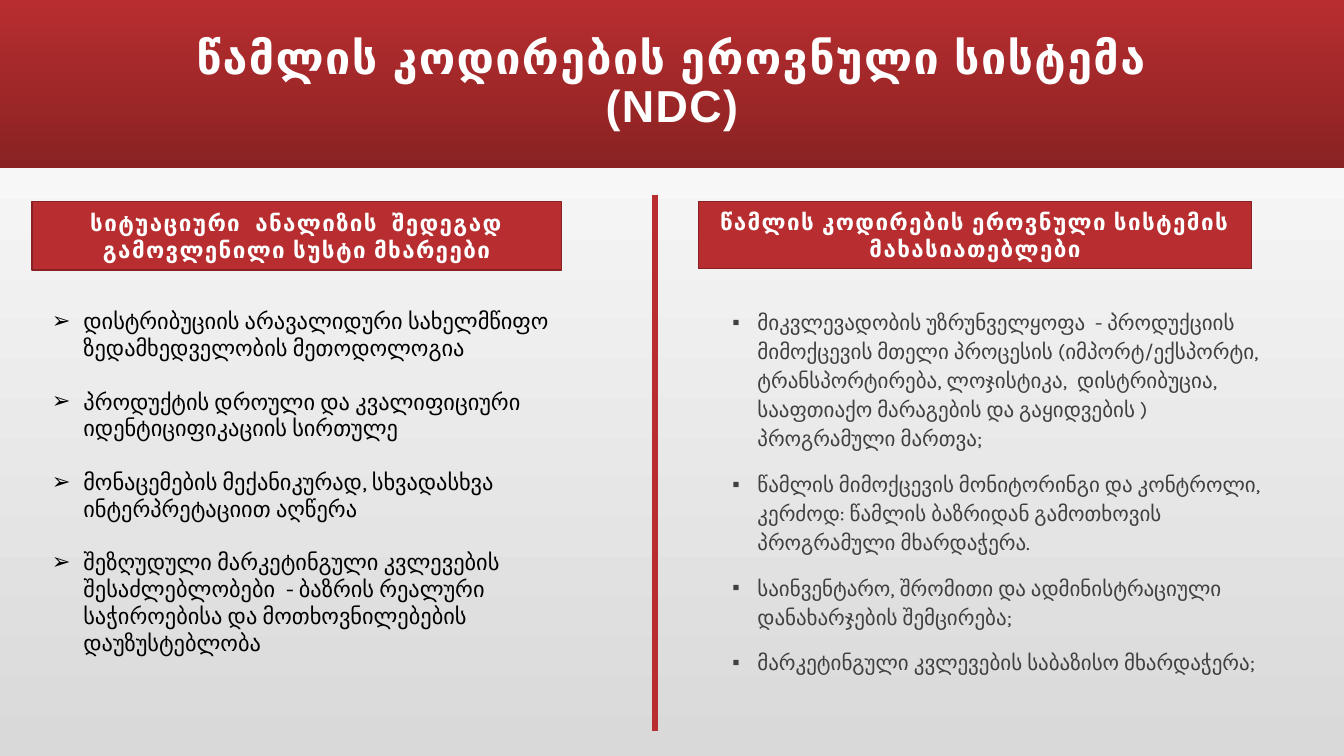
from lxml import etree
from pptx import Presentation
from pptx.dml.color import RGBColor
from pptx.enum.shapes import MSO_CONNECTOR, MSO_SHAPE
from pptx.enum.text import MSO_ANCHOR, MSO_AUTO_SIZE, PP_ALIGN
from pptx.oxml.ns import qn
from pptx.util import Pt

COLORS = {
    "red": "B82D2F", "dark_red": "8A2223", "edge": "882123",
    "white": "FFFFFF", "silver": "D9D9D9", "black": "000000", "gray": "404040",
}


def color(name):
    return RGBColor.from_string(COLORS[name])


def write(para, text, size=16, font="Karla", ink="white", bold=False,
          tracking=0, align=None, line=None, before=0, bullet=None, indent=0):
    span = para.add_run()
    span.text = text
    span.font.size = Pt(size)
    span.font.name = font
    span.font.bold = bold
    span.font.color.rgb = color(ink)
    if tracking:
        span._r.get_or_add_rPr().set("spc", str(tracking * 100))
    para.alignment = align
    para.line_spacing = line
    para.space_before = Pt(before)
    if bullet:
        props = para._p.get_or_add_pPr()
        props.set("marL", str(Pt(indent)))
        props.set("indent", str(-Pt(indent)))
        etree.SubElement(props, qn("a:buFont")).set("typeface", "Arial")
        etree.SubElement(props, qn("a:buChar")).set("char", bullet)


deck = Presentation()
deck.slide_width, deck.slide_height = Pt(960), Pt(540)
page = deck.slides.add_slide(deck.slide_layouts[5])
title = page.shapes.title

# Background and title band
band = page.shapes.add_shape(MSO_SHAPE.RECTANGLE, 0, 0, Pt(960), Pt(120))
band.shadow.inherit = False
band.line.fill.background()
title._element.addprevious(band._element)
for fill, angle, stops in [
    (page.background.fill, 90, ("silver", "white")),
    (band.fill, 270, ("red", "dark_red")),
]:
    fill.gradient()
    fill.gradient_angle = angle
    for stop, name, position in zip(fill.gradient_stops, stops, (0, 1)):
        stop.color.rgb = color(name)
        stop.position = position

# Title
title.left, title.top, title.width, title.height = Pt(84), 0, Pt(792), Pt(120)
title.text_frame.word_wrap = True
title.text_frame.auto_size = MSO_AUTO_SIZE.NONE
title.text_frame.vertical_anchor = MSO_ANCHOR.MIDDLE
write(title.text_frame.paragraphs[0], "წამლის კოდირების ეროვნული სისტემა (NDC)",
      size=32, font="Arial", bold=True, tracking=1, align=PP_ALIGN.CENTER, line=0.9)

# Column headings
for left, width, height, text in [
    (23, 378, 49, "სიტუაციური  ანალიზის  შედეგად გამოვლენილი სუსტი მხარეები"),
    (499, 395, 48, "წამლის კოდირების ეროვნული სისტემის მახასიათებლები"),
]:
    heading = page.shapes.add_shape(
        MSO_SHAPE.RECTANGLE, Pt(left), Pt(144), Pt(width), Pt(height))
    heading.shadow.inherit = False
    heading.fill.solid()
    heading.fill.fore_color.rgb = color("red")
    heading.line.color.rgb = color("edge")
    heading.line.width = Pt(1)
    heading.text_frame.word_wrap = True
    heading.text_frame.vertical_anchor = MSO_ANCHOR.MIDDLE
    write(heading.text_frame.paragraphs[0], text, bold=True, tracking=1,
          align=PP_ALIGN.CENTER)

# Divider between the columns
divider = page.shapes.add_connector(
    MSO_CONNECTOR.STRAIGHT, Pt(468), Pt(139), Pt(468), Pt(522))
divider.line.color.rgb = color("red")
divider.line.width = Pt(4)
etree.SubElement(divider._element.spPr, qn("a:effectLst"))

# Bulleted lists
weaknesses = [
    "დისტრიბუციის არავალიდური სახელმწიფო ზედამხედველობის მეთოდოლოგია",
    "პროდუქტის დროული და კვალიფიციური იდენტიციფიკაციის სირთულე",
    "მონაცემების მექანიკურად, სხვადასხვა ინტერპრეტაციით აღწერა",
    "შეზღუდული მარკეტინგული კვლევების შესაძლებლობები  - ბაზრის რეალური "
    "საჭიროებისა და მოთხოვნილებების დაუზუსტებლობა",
]
features = [
    "მიკვლევადობის უზრუნველყოფა  - პროდუქციის მიმოქცევის მთელი პროცესის "
    "(იმპორტ/ექსპორტი, ტრანსპორტირება, ლოჯისტიკა,  დისტრიბუცია, სააფთიაქო "
    "მარაგების და გაყიდვების ) პროგრამული მართვა;",
    "წამლის მიმოქცევის მონიტორინგი და კონტროლი, კერძოდ: წამლის ბაზრიდან "
    "გამოთხოვის პროგრამული მხარდაჭერა.",
    "საინვენტარო, შრომითი და ადმინისტრაციული დანახარჯების შემცირება;",
    "მარკეტინგული კვლევების საბაზისო მხარდაჭერა;",
]
weakness_style = dict(size=16, ink="black", bullet="➢", indent=22.5, gap=19)
feature_style = dict(size=15, ink="gray", bullet="▪", indent=18, gap=12, line=1.15)
for left, top, width, height, items, style in [
    (30, 216, 397, 259, weaknesses, weakness_style),
    (516, 215, 402, 289, features, feature_style),
]:
    box = page.shapes.add_textbox(Pt(left), Pt(top), Pt(width), Pt(height))
    box.text_frame.word_wrap = True
    gap = style.pop("gap")
    for index, item in enumerate(items):
        para = box.text_frame.add_paragraph() if index else box.text_frame.paragraphs[0]
        write(para, item, before=gap if index else 0, **style)

deck.save("out.pptx")
